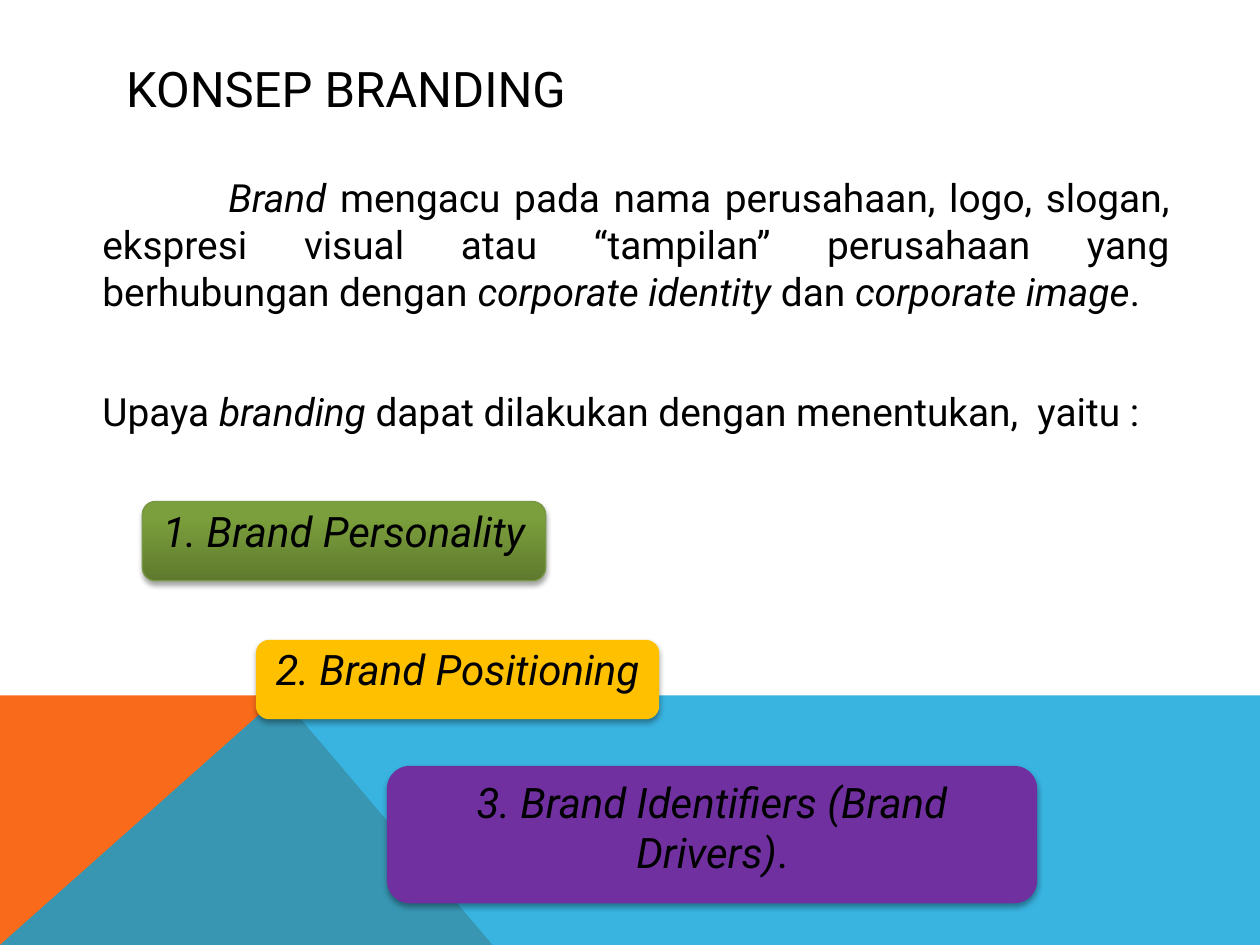
import copy
from dataclasses import dataclass

import lxml.etree
import pptx
import pptx.dml.color
import pptx.enum.shapes
import pptx.enum.text
import pptx.oxml.ns
import pptx.util

Cm = pptx.util.Cm
Pt = pptx.util.Pt
qn = pptx.oxml.ns.qn
Align = pptx.enum.text.PP_ALIGN
Anchor = pptx.enum.text.MSO_ANCHOR


@dataclass(frozen=True)
class Theme:
    font: str = "Roboto"
    text: str = "000000"
    orange: str = "F96A1B"
    blue: str = "08A1D9"
    blue_alpha: int = 80
    green_stops: tuple = ((0, "5F7A2E"), (0.8, "7B9F3C"), (1, "7CA13B"))
    green_line: str = "7A9746"
    yellow: str = "FFC000"
    purple: str = "7030A0"
    title_size: float = 28
    body_size: float = 22.2
    label_size: float = 24


theme = Theme()


def rgb(value):
    return pptx.dml.color.RGBColor.from_string(value)


def add_spans(para, spans, size):
    for words, italic in spans:
        span = para.add_run()
        span.text = words
        span.font.name = theme.font
        span.font.size = Pt(size)
        span.font.bold = False
        span.font.italic = italic
        span.font.color.rgb = rgb(theme.text)


deck = pptx.Presentation()
deck.slide_width, deck.slide_height = Cm(25.4), Cm(19.05)
slide = deck.slides.add_slide(deck.slide_layouts[1])

band_top, bottom, peak = 14.02, 19.05, 5.66
bands = [
    (theme.orange, 100, [(0, bottom), (0, band_top), (peak, band_top), (9.93, bottom)]),
    (theme.blue, theme.blue_alpha,
     [(0, bottom), (peak, band_top), (25.4, band_top), (25.4, bottom)]),
]
for color, alpha, corners in bands:
    points = [(Cm(x), Cm(y)) for x, y in corners]
    builder = slide.shapes.build_freeform(*points[0])
    builder.add_line_segments(points[1:], close=True)
    band = builder.convert_to_shape()
    band.shadow.inherit = False
    band.line.fill.background()
    band.fill.solid()
    band.fill.fore_color.rgb = rgb(color)
    if alpha < 100:
        tint = band._element.spPr.find(qn("a:solidFill"))[0]
        lxml.etree.SubElement(tint, qn("a:alpha"), val=str(alpha * 1000))

title = slide.shapes.title
title.left, title.top, title.width, title.height = Cm(2.29), Cm(1.02), Cm(20.88), Cm(1.52)
title.text_frame.auto_size = pptx.enum.text.MSO_AUTO_SIZE.NONE
title.text_frame.vertical_anchor = Anchor.MIDDLE
para = title.text_frame.paragraphs[0]
para.alignment = Align.LEFT
add_spans(para, [("KONSEP BRANDING", False)], theme.title_size)

body = slide.placeholders[1]
body.left, body.top, body.width, body.height = Cm(0.84), Cm(3.38), Cm(23.01), Cm(7.21)
body.text_frame.auto_size = pptx.enum.text.MSO_AUTO_SIZE.NONE
body.text_frame.vertical_anchor = Anchor.TOP
paragraphs = [
    (2.54, 0, [
        ("Brand ", True),
        ("mengacu pada nama perusahaan, logo, slogan, ekspresi visual atau “tampilan” "
         "perusahaan yang berhubungan dengan ", False),
        ("corporate identity ", True),
        ("dan ", False),
        ("corporate image", True),
        (".", False),
    ]),
    (0, 42, [
        ("Upaya ", False),
        ("branding ", True),
        ("dapat dilakukan dengan menentukan,  yaitu :", False),
    ]),
]
for number, (indent, gap, spans) in enumerate(paragraphs):
    para = body.text_frame.add_paragraph() if number else body.text_frame.paragraphs[0]
    para.alignment = Align.JUSTIFY
    para.space_before = Pt(gap)
    properties = para._p.get_or_add_pPr()
    properties.set("marL", str(Cm(0.97)))
    properties.set("indent", str(Cm(indent)))
    lxml.etree.SubElement(properties, qn("a:buNone"))
    add_spans(para, spans, theme.body_size)

labels = [
    (2.87, 10.11, 8.13, 1.6, 0, None, [("1. Brand Personality", True)]),
    (5.16, 12.9, 8.13, 1.6, 0, theme.yellow, [("2. Brand Positioning", True)]),
    (7.8, 15.44, 13.11, 2.77, 0.08, theme.purple,
     [("3. Brand Identifiers (Brand Drivers)", True), (".", False)]),
]
for left, top, width, height, inset, color, spans in labels:
    box = slide.shapes.add_shape(
        pptx.enum.shapes.MSO_SHAPE.ROUNDED_RECTANGLE,
        Cm(left), Cm(top), Cm(width), Cm(height))
    if color:
        box.fill.solid()
        box.fill.fore_color.rgb = rgb(color)
        box.line.fill.background()
    else:
        box.fill.gradient()
        box.fill.gradient_angle = 90
        stop_list = box._element.spPr.find(".//" + qn("a:gsLst"))
        stop_list.append(copy.deepcopy(stop_list[-1]))
        for stop, (position, shade) in zip(box.fill.gradient_stops, theme.green_stops):
            stop.position = position
            stop.color.rgb = rgb(shade)
        box.line.color.rgb = rgb(theme.green_line)
        box.line.width = Pt(0.75)

    box.shadow.inherit = False
    effects = box._element.spPr.find(qn("a:effectLst"))
    shadow = lxml.etree.SubElement(
        effects, qn("a:outerShdw"), blurRad=str(Pt(3.1)), dist=str(Pt(1.8)),
        dir="5400000", rotWithShape="0")
    shade = lxml.etree.SubElement(shadow, qn("a:srgbClr"), val=theme.text)
    lxml.etree.SubElement(shade, qn("a:alpha"), val="35000")

    frame = box.text_frame
    frame.word_wrap = True
    frame.vertical_anchor = Anchor.TOP
    frame.margin_top = Cm(inset)
    para = frame.paragraphs[0]
    para.alignment = Align.CENTER
    add_spans(para, spans, theme.label_size)

deck.save("out.pptx")
